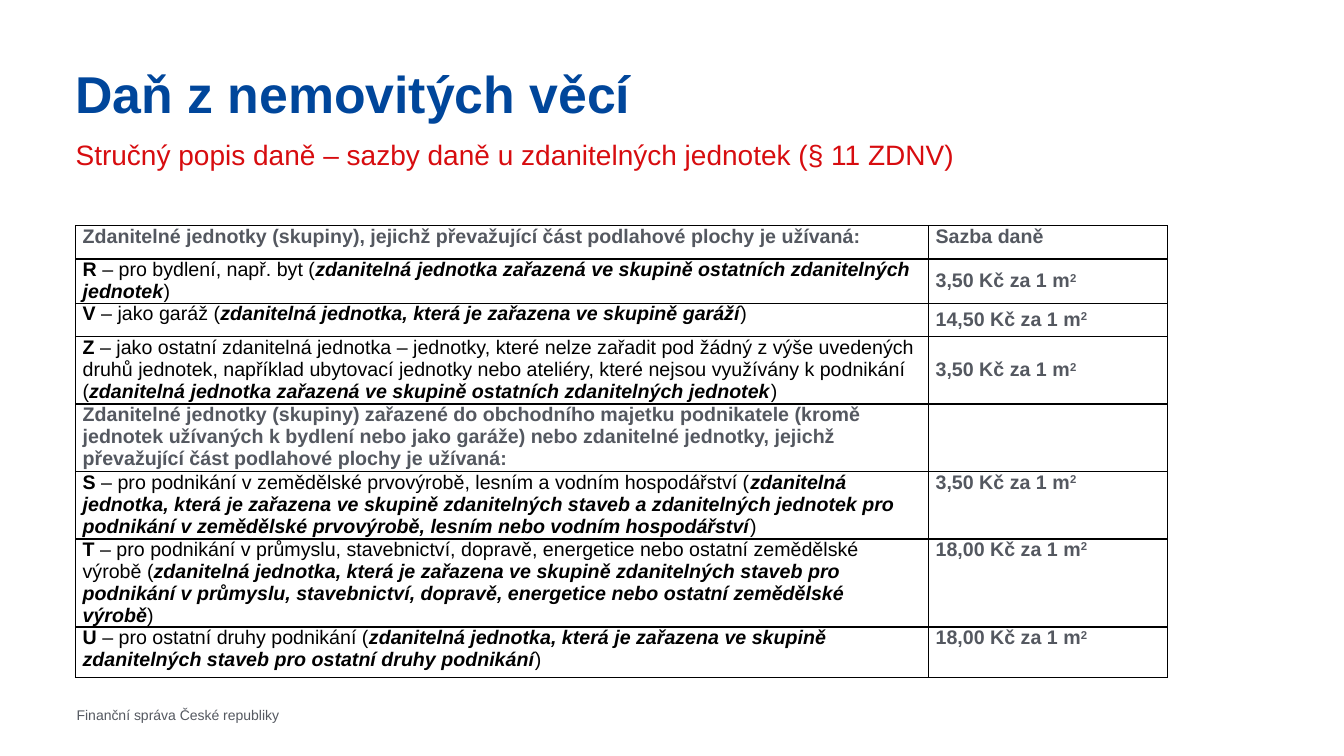
from pptx import Presentation
from pptx.dml.color import RGBColor
from pptx.enum import text as t
from pptx.oxml import parse_xml
from pptx.oxml.ns import nsdecls
from pptx.util import Inches, Pt

COLORS = {"title": "00469B", "subtitle": "D70C0F", "gray": "545860", "black": "000000"}
MARGINS = ("margin_left", "margin_top", "margin_right", "margin_bottom")
COLUMNS = (8.46, 2.37)
TOP, MIDDLE = t.MSO_ANCHOR.TOP, t.MSO_ANCHOR.MIDDLE

ROWS = [
    (0.33, TOP, "Zdanitelné jednotky (skupiny), jejichž převažující část podlahové plochy je užívaná:",
     "Sazba daně"),
    (0.33, MIDDLE, ("R ", "– pro bydlení, např. byt (",
     "zdanitelná jednotka zařazená ve skupině ostatních zdanitelných jednotek"), "3,50"),
    (0.33, MIDDLE, ("V ", "– jako garáž (",
     "zdanitelná jednotka, která je zařazena ve skupině garáží"), "14,50"),
    (0.67, MIDDLE, ("Z ", "– jako ostatní zdanitelná jednotka – jednotky, které nelze zařadit pod žádný "
     "z výše uvedených druhů jednotek, například ubytovací jednotky nebo ateliéry, "
     "které nejsou využívány k podnikání (",
     "zdanitelná jednotka zařazená ve skupině ostatních zdanitelných jednotek"), "3,50"),
    (0.67, TOP, "Zdanitelné jednotky (skupiny) zařazené do obchodního majetku podnikatele "
     "(kromě jednotek užívaných k bydlení nebo jako garáže) nebo zdanitelné jednotky, "
     "jejichž převažující část podlahové plochy je užívaná:", ""),
    (0.67, TOP, ("S ", "– pro podnikání v zemědělské prvovýrobě, lesním a vodním hospodářství (",
     "zdanitelná jednotka, která je zařazena ve skupině zdanitelných staveb a zdanitelných jednotek "
     "pro podnikání v zemědělské prvovýrobě, lesním nebo vodním hospodářství"), "3,50"),
    (0.83, TOP, ("T ", "– pro podnikání v průmyslu, stavebnictví, dopravě, energetice "
     "nebo ostatní zemědělské výrobě (",
     "zdanitelná jednotka, která je zařazena ve skupině zdanitelných staveb pro podnikání "
     "v průmyslu, stavebnictví, dopravě, energetice nebo ostatní zemědělské výrobě"), "18,00"),
    (0.5, TOP, ("U ", "– pro ostatní druhy podnikání (",
     "zdanitelná jednotka, která je zařazena ve skupině zdanitelných staveb "
     "pro ostatní druhy podnikání"), "18,00"),
]


def set_all(obj, values):
    for name, value in values.items():
        setattr(obj, name, value)


def add_run(p, words, size, color, bold=False, italic=False):
    r = p.add_run()
    r.text = words
    set_all(r.font, {"name": "Arial", "size": Pt(size), "bold": bold, "italic": italic})
    r.font.color.rgb = RGBColor.from_string(COLORS[color])
    return r


def fill_text(sp, box, words, size, color, bold=False, anchor=TOP, inset=0, spacing=1.0):
    set_all(sp, dict(zip(("left", "top", "width", "height"), map(Inches, box))))
    tf = sp.text_frame
    set_all(tf, {"word_wrap": True, "auto_size": t.MSO_AUTO_SIZE.NONE, "vertical_anchor": anchor})
    set_all(tf, dict(zip(MARGINS, map(Inches, (0, inset, 0, inset)))))
    p = tf.paragraphs[0]
    set_all(p, {"alignment": t.PP_ALIGN.LEFT, "line_spacing": spacing})
    add_run(p, words, size, color, bold)


def add_heading(s, x, y, w):
    fill_text(s.shapes.title, (x, y, w, 0.65), "Daň z nemovitých věcí", 37, "title", True, spacing=0.9)
    box = (x, y + 0.68, w, 0.84)
    fill_text(s.shapes.add_textbox(0, 0, 0, 0), box,
              "Stručný popis daně – sazby daně u zdanitelných jednotek (§ 11 ZDNV)", 20, "subtitle")


def add_footer(s, x, y, w, h):
    fill_text(s.shapes.add_textbox(0, 0, 0, 0), (x, y, w, h),
              "Finanční správa České republiky", 10, "gray", anchor=MIDDLE, inset=0.04)


def style_cell(cell, anchor):
    set_all(cell, dict(zip(MARGINS, map(Inches, (0.07, 0, 0.07, 0)))))
    cell.vertical_anchor = anchor
    tcPr = cell._tc.get_or_add_tcPr()
    for side in "LRTB":
        tcPr.append(parse_xml(
            f'<a:ln{side} {nsdecls("a")} w="12700"><a:solidFill>'
            f'<a:srgbClr val="{COLORS["black"]}"/></a:solidFill></a:ln{side}>'))
    cell.fill.background()


def write_group(p, group):
    if isinstance(group, str):
        add_run(p, group, 14, "gray", True)
        return
    letter, use, note = group
    add_run(p, letter, 14, "black", True)
    add_run(p, use, 14, "black")
    add_run(p, note, 14, "black", True, True)
    add_run(p, ")", 14, "black")


def write_rate(p, rate):
    if not rate:
        p.font.size = Pt(14)
    elif rate[0].isdigit():
        add_run(p, f"{rate} Kč za 1 m", 14, "gray", True)
        r = add_run(p, "2", 14, "gray", True)
        r._r.get_or_add_rPr().set("baseline", "30000")
    else:
        add_run(p, rate, 14, "gray", True)


def add_rates(s, x, y):
    height = sum(row[0] for row in ROWS)
    frame = s.shapes.add_table(len(ROWS), len(COLUMNS), *map(Inches, (x, y, sum(COLUMNS), height)))
    table = frame.table
    set_all(table, {"first_row": False, "horz_banding": False})
    for column, width in zip(table.columns, COLUMNS):
        column.width = Inches(width)
    for row, (height, anchor, group, rate) in zip(table.rows, ROWS):
        row.height = Inches(height)
        group_cell, rate_cell = row.cells
        style_cell(group_cell, TOP)
        style_cell(rate_cell, anchor)
        write_group(group_cell.text_frame.paragraphs[0], group)
        write_rate(rate_cell.text_frame.paragraphs[0], rate)


def main():
    prs = Presentation()
    set_all(prs, {"slide_width": Inches(13.33), "slide_height": Inches(7.5)})
    s = prs.slides.add_slide(prs.slide_layouts[5])
    add_heading(s, 0.75, 0.68, 10.83)
    add_footer(s, 0.76, 6.89, 5.12, 0.4)
    add_rates(s, 0.75, 2.24)
    prs.save("out.pptx")


if __name__ == "__main__":
    main()
